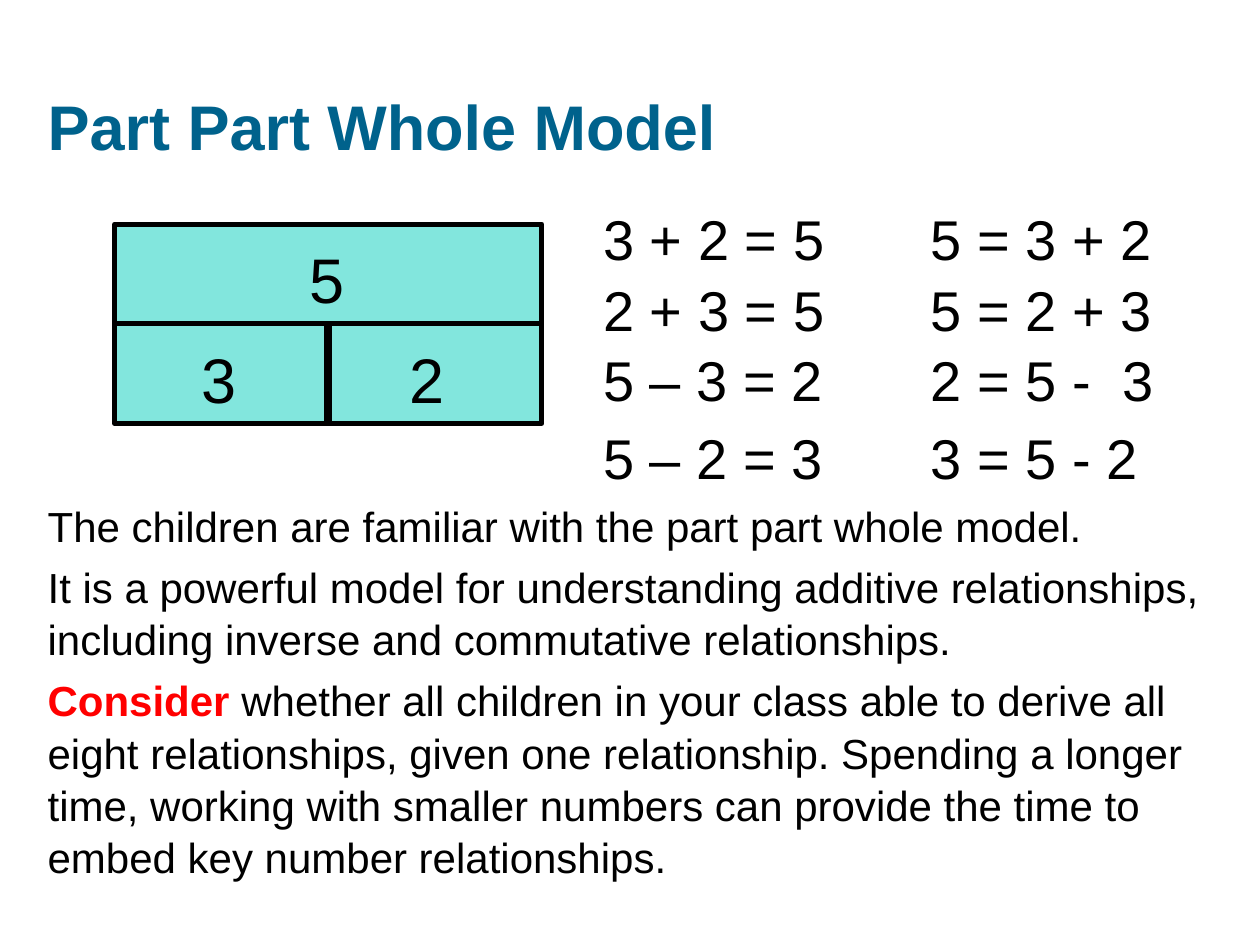
import pptx
import pptx.dml.color
import pptx.enum.shapes
import pptx.enum.text
import pptx.oxml.ns
import pptx.util
from lxml import etree

Inches = pptx.util.Inches
Pt = pptx.util.Pt
Anchor = pptx.enum.text.MSO_ANCHOR
Align = pptx.enum.text.PP_ALIGN


def color(code):
    return pptx.dml.color.RGBColor.from_string(code)


def write(par, text, size=24, ink="000000", bold=False):
    run = par.add_run()
    run.text = text
    run.font.name = "Arial"
    run.font.size = Pt(size)
    run.font.bold = bold
    run.font.color.rgb = color(ink)


class Deck:
    fill = "82E6DD"
    line = "000000"

    def __init__(self):
        self.file = pptx.Presentation()
        self.file.slide_width = Inches(10)
        self.file.slide_height = Inches(7.5)
        self.slide = self.file.slides.add_slide(self.file.slide_layouts[6])

    def text(self, box, pars, anchor=Anchor.TOP, align=Align.LEFT,
             lead=1.0, gap=0, tab=None, **style):
        frame = self.slide.shapes.add_textbox(*map(Inches, box)).text_frame
        frame.word_wrap = True
        frame.vertical_anchor = anchor
        for i, runs in enumerate(pars):
            par = frame.add_paragraph() if i else frame.paragraphs[0]
            if tab:
                tabs = etree.SubElement(par._p.get_or_add_pPr(),
                                        pptx.oxml.ns.qn("a:tabLst"))
                etree.SubElement(tabs, pptx.oxml.ns.qn("a:tab"),
                                 pos=str(Inches(tab)), algn="l")
            par.alignment = align
            par.line_spacing = lead
            if i:
                par.space_before = Pt(gap)
            for words, extra in runs:
                write(par, words, **{**style, **extra})
        return frame

    def bar(self, box):
        rect = self.slide.shapes.add_shape(
            pptx.enum.shapes.MSO_SHAPE.RECTANGLE, *map(Inches, box))
        rect.shadow.inherit = False
        rect.fill.solid()
        rect.fill.fore_color.rgb = color(self.fill)
        rect.line.color.rgb = color(self.line)
        rect.line.width = Pt(3)
        return rect

    def split(self, top, low):
        rule = self.slide.shapes.add_connector(
            pptx.enum.shapes.MSO_CONNECTOR.STRAIGHT, 0, 0, 0, 0)
        rule.begin_connect(top, 2)
        rule.end_connect(low, 2)
        rule.line.color.rgb = color(self.line)
        rule.line.width = Pt(4.5)
        etree.SubElement(rule._element.spPr, pptx.oxml.ns.qn("a:effectLst"))


def main():
    deck = Deck()
    deck.text((0.28, 0.37, 8.67, 1.25), [[("Part Part Whole Model", {})]],
              anchor=Anchor.MIDDLE, size=36, ink="00628C", bold=True)
    deck.text((0.28, 3.91, 9.53, 3.15), [
        [("The children are familiar with the part part whole model.", {})],
        [("It is a powerful model for understanding additive relationships, "
          "including inverse and commutative relationships.", {})],
        [("Consider ", {"ink": "FF0000", "bold": True}),
         ("whether all children in your class able to derive all eight "
          "relationships, given one relationship. Spending a longer time, "
          "working with smaller numbers can provide the time to embed key "
          "number relationships.", {})],
    ], lead=1.04, gap=4.8)

    left, top, wide, high = 0.91, 1.78, 3.39, 0.79
    whole, parts = [deck.bar((left, top + row * high, wide, high))
                    for row in range(2)]
    deck.split(whole, parts)
    side = 0.71
    for digit, x, row in (("5", 2.24, 0), ("3", 1.38, 1), ("2", 3.03, 1)):
        deck.text((x, top + 0.08 + row * high, side, side),
                  [[(digit, {})]], align=Align.CENTER, size=36)

    sums = ["3 + 2 = 5\t5 = 3 + 2", "2 + 3 = 5\t5 = 2 + 3",
            "5 – 3 = 2\t2 = 5 -  3", "5 – 2 = 3\t3 = 5 - 2"]
    frame = deck.text((4.69, 1.55, 4.84, 2.86), [[(s, {})] for s in sums],
                      lead=1.05, tab=2.6, size=32)
    frame.paragraphs[-1].space_before = Pt(3.8)
    deck.file.save("out.pptx")


if __name__ == "__main__":
    main()
